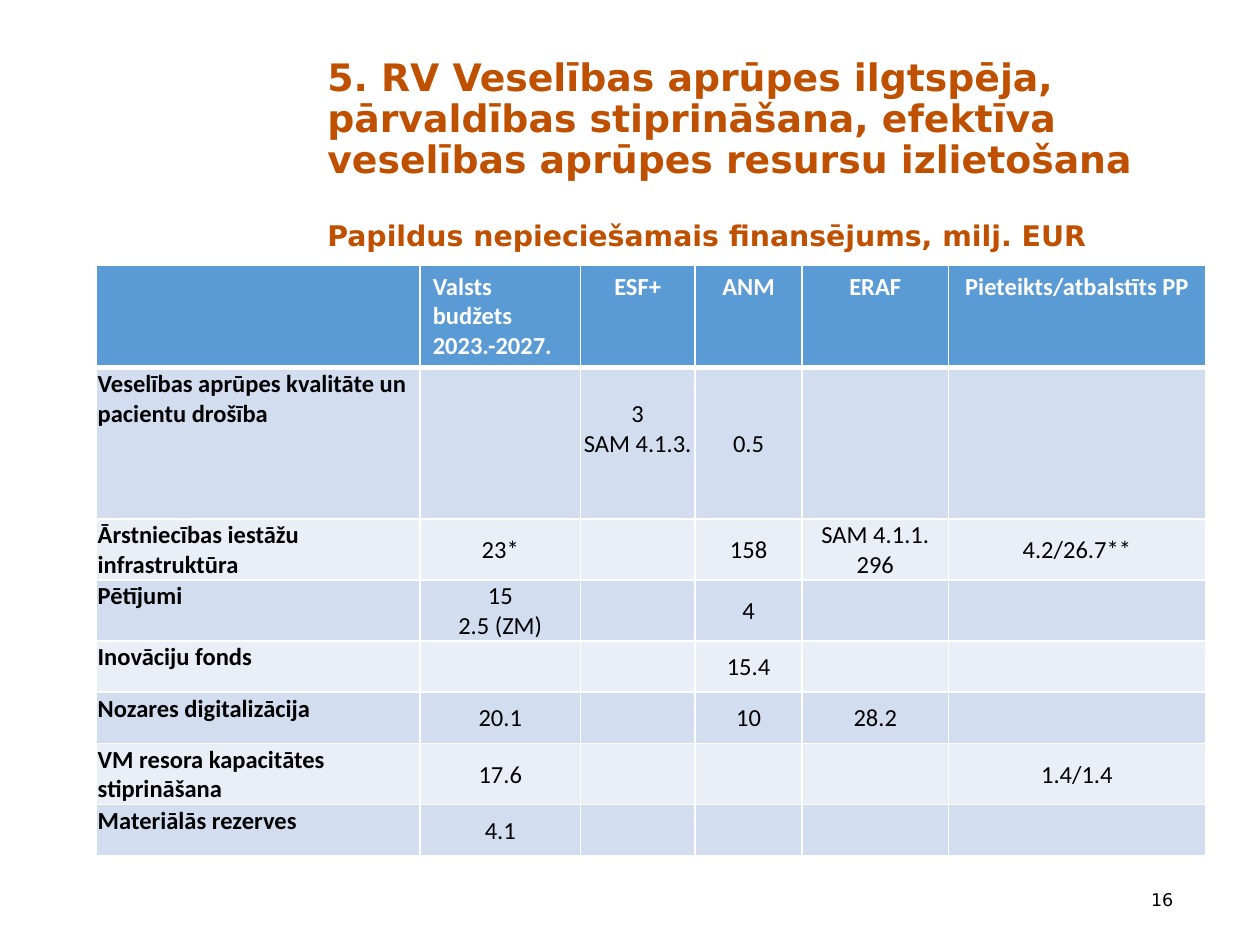
"""Build the slide on extra funding needed for health care sustainability."""
from lxml import etree
from pptx import Presentation
from pptx.dml.color import RGBColor
from pptx.enum.text import MSO_ANCHOR, PP_ALIGN
from pptx.oxml.ns import qn
from pptx.util import Cm, Pt

LEFT, CENTER, RIGHT = PP_ALIGN.LEFT, PP_ALIGN.CENTER, PP_ALIGN.RIGHT
TOP, MIDDLE = MSO_ANCHOR.TOP, MSO_ANCHOR.MIDDLE
HEADER_FILL = "5B9BD5"
BAND_FILLS = ["EAEFF7", "D2DEEF"]
COLUMN_WIDTHS = [6.53, 3.23, 2.31, 2.16, 2.95, 5.18]
ROW_HEIGHTS = [2.02, 3.05, 1.22, 1.22, 1.03, 1.03, 1.22, 1.03]
ROWS = [
    ["", "Valsts budžets\n2023.-2027.", "ESF+", "ANM", "ERAF", "Pieteikts/atbalstīts PP"],
    ["Veselības aprūpes kvalitāte un pacientu drošība", "", "3\nSAM 4.1.3.", "0.5", "", ""],
    ["Ārstniecības iestāžu infrastruktūra", "23*", "", "158", "SAM 4.1.1.\n296", "4.2/26.7**"],
    ["Pētījumi", "15\n2.5 (ZM)", "", "4", "", ""],
    ["Inovāciju fonds", "", "", "15.4", "", ""],
    ["Nozares digitalizācija", "20.1", "", "10", "28.2", ""],
    ["VM resora kapacitātes stiprināšana", "17.6", "", "", "", "1.4/1.4"],
    ["Materiālās rezerves", "4.1", "", "", "", ""],
]


def color(value):
    return RGBColor.from_string(value)


def add_text(para, text, font, size, fill, bold=False, align=LEFT):
    para.alignment = align
    span = para.add_run()
    span.text = text
    span.font.name = font
    span.font.size = Pt(size)
    span.font.bold = bold
    span.font.color.rgb = color(fill)


deck = Presentation()
deck.slide_width, deck.slide_height = Cm(25.4), Cm(19.05)
page = deck.slides.add_slide(deck.slide_layouts[6])

table = page.shapes.add_table(
    len(ROWS), len(COLUMN_WIDTHS), Cm(1.94), Cm(5.35), Cm(sum(COLUMN_WIDTHS)), Cm(sum(ROW_HEIGHTS))
).table
for column, width in zip(table.columns, COLUMN_WIDTHS):
    column.width = Cm(width)
for row, height in zip(table.rows, ROW_HEIGHTS):
    row.height = Cm(height)

for row_index, texts in enumerate(ROWS):
    is_header = row_index == 0
    for column_index, text in enumerate(texts):
        cell = table.cell(row_index, column_index)
        is_label = column_index == 0
        properties = cell._tc.get_or_add_tcPr()
        for side in "LRTB":
            thick = (row_index, side) in [(0, "B"), (1, "T")]
            line = etree.SubElement(properties, qn(f"a:ln{side}"), w=str(Pt(3 if thick else 1)))
            line_fill = etree.SubElement(line, qn("a:solidFill"))
            etree.SubElement(line_fill, qn("a:srgbClr"), val="FFFFFF")
        cell.fill.solid()
        cell.fill.fore_color.rgb = color(HEADER_FILL if is_header else BAND_FILLS[row_index % 2])
        if not text:
            continue
        if not is_header:
            cell.margin_left = cell.margin_top = cell.margin_right = Cm(0.03)
            cell.margin_bottom = Cm(0.6 if text.startswith("3\n") else 0)
            cell.vertical_anchor = TOP if is_label else MIDDLE
        align = LEFT if is_label or (is_header and column_index == 1) else CENTER
        for line_index, line_text in enumerate(text.split("\n")):
            frame = cell.text_frame
            para = frame.add_paragraph() if line_index else frame.paragraphs[0]
            add_text(para, line_text, "Calibri", 14, "FFFFFF" if is_header else "000000",
                     is_header or is_label, align)

title_box = page.shapes.add_textbox(Cm(6.35), Cm(1.07), Cm(17.58), Cm(4.2))
title_box.text_frame.word_wrap = True
heading = title_box.text_frame.paragraphs[0]
heading.line_spacing = 0.9
add_text(heading, "5. RV Veselības aprūpes ilgtspēja, pārvaldības stiprināšana, "
         "efektīva veselības aprūpes resursu izlietošana", "DejaVu Sans", 21.6, "BE5000", True)
subtitle = title_box.text_frame.add_paragraph()
subtitle.line_spacing = 0.9
subtitle.space_before = Pt(23)
add_text(subtitle, "Papildus nepieciešamais finansējums, milj. EUR", "DejaVu Sans", 16.2, "BE5000", True)

number_box = page.shapes.add_textbox(Cm(21.74), Cm(17.63), Cm(2.16), Cm(1.02))
number_box.text_frame.word_wrap = True
number_box.text_frame.vertical_anchor = MIDDLE
add_text(number_box.text_frame.paragraphs[0], "16", "DejaVu Sans", 10, "000000", align=RIGHT)

deck.save("out.pptx")
